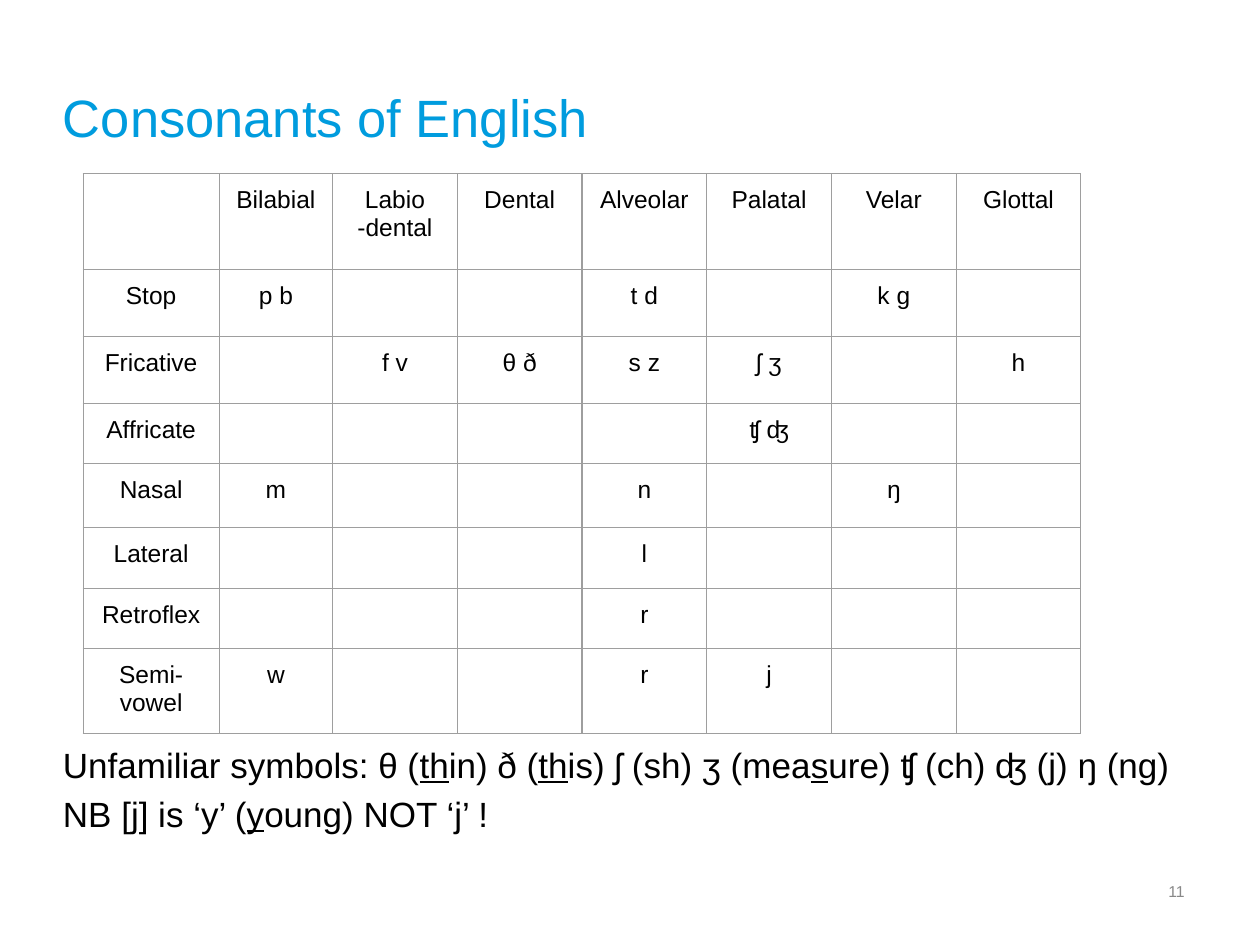
import dataclasses

import pptx
import pptx.dml.color
import pptx.enum.text
import pptx.oxml
import pptx.oxml.ns
import pptx.util

ALIGN = pptx.enum.text.PP_ALIGN
ANCHOR = pptx.enum.text.MSO_ANCHOR


@dataclasses.dataclass(frozen=True)
class Theme:
    font: str = "Arial"
    ink: str = "000000"
    blue: str = "009CDE"
    gray: str = "888888"
    rule: str = "9E9E9E"
    line: float = 0.75
    title: int = 30
    body: int = 20
    cell: int = 14
    small: int = 9


THEME = Theme()
WIDE, HIGH = pptx.util.Inches(10), pptx.util.Inches(7.5)
COLS, ROWS = 100, 75

HEADS = ["", "Bilabial", "Labio\n-dental", "Dental", "Alveolar", "Palatal", "Velar", "Glottal"]
SOUNDS = {
    "Stop": {"Bilabial": "p b", "Alveolar": "t d", "Velar": "k g"},
    "Fricative": {"Labio\n-dental": "f v", "Dental": "θ ð", "Alveolar": "s z",
                  "Palatal": "ʃ ʒ", "Glottal": "h"},
    "Affricate": {"Palatal": "ʧ ʤ"},
    "Nasal": {"Bilabial": "m", "Alveolar": "n", "Velar": "ŋ"},
    "Lateral": {"Alveolar": "l"},
    "Retroflex": {"Alveolar": "r"},
    "Semi-\nvowel": {"Bilabial": "w", "Alveolar": "r", "Palatal": "j"},
}
WIDTHS = [10.8, 9] + [9.9] * 6
HEIGHTS = [7.6, 5.3, 5.3, 4.8, 5.1, 4.8, 4.8, 6.7]
NOTES = (
    "Unfamiliar symbols: θ (_th_in) ð (_th_is) ʃ (sh) ʒ (mea_s_ure) ʧ (ch) ʤ (j) ŋ (ng)\n"
    "NB [j] is ‘y’ (_y_oung) NOT ‘j’ !"
)


def across(cols):
    return round(WIDE * cols / COLS)


def down(rows):
    return round(HIGH * rows / ROWS)


def place(box):
    left, top, width, height = box
    return across(left), down(top), across(width), down(height)


def write(frame, text, size, color=THEME.ink, align=ALIGN.LEFT, gap=0):
    """Fill a frame; newlines part paragraphs, underscores wrap underlined words."""
    for row, line in enumerate(text.split("\n")):
        para = frame.paragraphs[0] if row == 0 else frame.add_paragraph()
        para.alignment = align
        if row:
            para.space_before = pptx.util.Pt(gap)
        for turn, part in enumerate(line.split("_")):
            run = para.add_run()
            run.text = part
            run.font.name = THEME.font
            run.font.size = pptx.util.Pt(size)
            run.font.color.rgb = pptx.dml.color.RGBColor.from_string(color)
            if turn % 2:
                run.font.underline = True


def inset(part, side, end):
    part.margin_left = part.margin_right = across(side)
    part.margin_top = part.margin_bottom = down(end)


def label(slide, box, text, size, anchor=ANCHOR.TOP, pad=(0, 0), **style):
    frame = slide.shapes.add_textbox(*place(box)).text_frame
    frame.word_wrap = True
    frame.vertical_anchor = anchor
    inset(frame, *pad)
    write(frame, text, size, **style)


def border(cell):
    props = cell._tc.get_or_add_tcPr()
    space = pptx.oxml.ns.nsdecls("a")
    width = pptx.util.Pt(THEME.line)
    for side in "LRTB":
        props.append(pptx.oxml.parse_xml(
            f'<a:ln{side} {space} w="{width}"><a:solidFill>'
            f'<a:srgbClr val="{THEME.rule}"/></a:solidFill></a:ln{side}>'
        ))


def chart(slide, box):
    shape = slide.shapes.add_table(len(HEIGHTS), len(WIDTHS), *place(box))
    table = shape.table
    table.first_row = table.horz_banding = False
    for col, width in zip(table.columns, WIDTHS):
        col.width = across(width)
    for row, height in zip(table.rows, HEIGHTS):
        row.height = down(height)
    grid = [HEADS] + [
        [kind] + [found.get(head, "") for head in HEADS[1:]]
        for kind, found in SOUNDS.items()
    ]
    for row, texts in zip(table.rows, grid):
        for cell, text in zip(row.cells, texts):
            border(cell)
            cell.fill.background()
            if text:
                inset(cell, 1, 1)
                write(cell.text_frame, text, THEME.cell, align=ALIGN.CENTER)


def title(slide, box):
    label(slide, box, "Consonants of English", THEME.title,
          anchor=ANCHOR.MIDDLE, color=THEME.blue)


def notes(slide, box):
    label(slide, box, NOTES, THEME.body, gap=4)


def folio(slide, box):
    label(slide, box, "11", THEME.small, anchor=ANCHOR.MIDDLE, pad=(1, 0.5),
          color=THEME.gray, align=ALIGN.RIGHT)


def main():
    deck = pptx.Presentation()
    deck.slide_width, deck.slide_height = WIDE, HIGH
    slide = deck.slides.add_slide(deck.slide_layouts[6])
    notes(slide, (5, 59, 90, 8))
    title(slide, (5, 3, 90, 12.5))
    folio(slide, (72.5, 68.7, 22.5, 4))
    chart(slide, (6.6, 13.8, sum(WIDTHS), sum(HEIGHTS)))
    deck.save("out.pptx")


if __name__ == "__main__":
    main()
